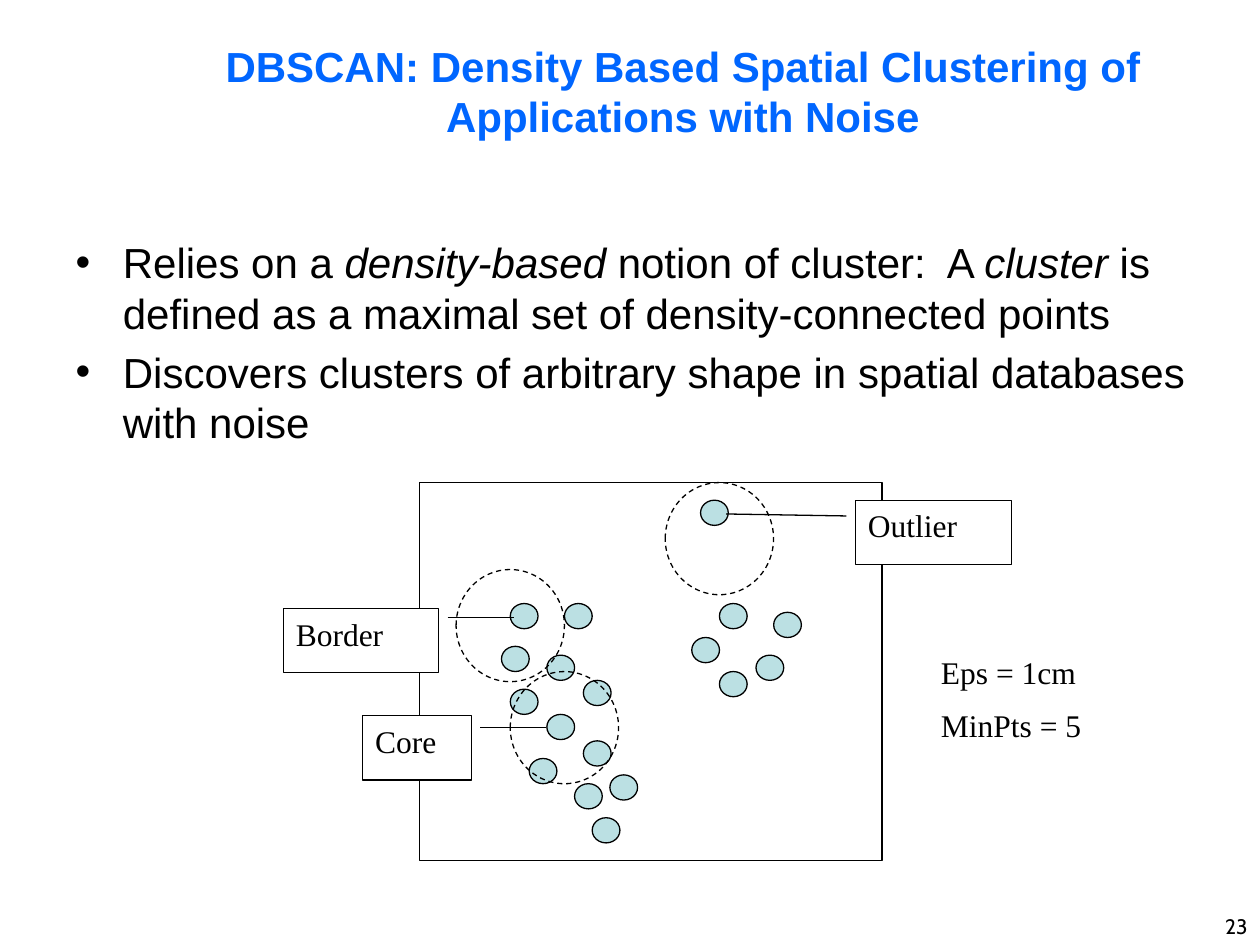
from pptx import Presentation
from pptx.dml.color import RGBColor
from pptx.enum.dml import MSO_LINE
from pptx.enum.shapes import MSO_SHAPE
from pptx.enum.text import MSO_ANCHOR, MSO_AUTO_SIZE, PP_ALIGN
from pptx.util import Pt

PX = 9144  # 100 px to the inch
OVAL, RECT, CALLOUT = MSO_SHAPE.OVAL, MSO_SHAPE.RECTANGLE, MSO_SHAPE.LINE_CALLOUT_1
TOP, MIDDLE, BOTTOM = MSO_ANCHOR.TOP, MSO_ANCHOR.MIDDLE, MSO_ANCHOR.BOTTOM
LEFT, CENTER, RIGHT = PP_ALIGN.LEFT, PP_ALIGN.CENTER, PP_ALIGN.RIGHT
DASH, NO_FIT = MSO_LINE.DASH, MSO_AUTO_SIZE.NONE

BLACK, WHITE, BLUE, TEAL = "000000", "FFFFFF", "0066FF", "BBE0E3"
HEADING = {"name": "Arial", "size": Pt(24), "bold": True}
BODY = {"name": "Arial", "size": Pt(24)}
LABEL = {"name": "Times New Roman", "size": Pt(18)}
NUMBER = {"name": "Cabin", "size": Pt(12)}

BULLETS = [
    [("Relies on a ", False), ("density-based", True),
     (" notion of cluster:  A ", False), ("cluster", True),
     (" is defined as a maximal set of density-connected points", False)],
    [("Discovers clusters of arbitrary shape in spatial databases with noise", False)],
]

# Positions inside the plot frame
DOT_SIZE = (22, 20)
DOTS = [(72, 96), (65, 130), (101, 137), (115, 96), (130, 157), (72, 164),
        (101, 184), (87, 219), (123, 239), (137, 266), (130, 205), (151, 232),
        (223, 14), (238, 96), (216, 123), (267, 137), (281, 103), (238, 150)]
RADIUS_SIZE = (86, 89)
RADII = [(29, 69), (72, 150), (195, 0)]
# text, box, line start y, x and line end y, x as shares of the box
CALLOUTS = [
    ("Core", (-45, 185, 86, 51), (0.188, 1.083, 0.188, 1.688)),
    ("Border", (-108, 100, 123, 51), (0.145, 1.059, 0.145, 1.485)),
    ("Outlier", (346, 14, 124, 51), (0.245, -0.058, 0.214, -0.828)),
]


def rgb(value):
    return RGBColor.from_string(value)


def emu(box):
    return [v * PX for v in box]


def place(sp, box):
    sp.left, sp.top, sp.width, sp.height = emu(box)


def setup_frame(tf, anchor):
    tf.word_wrap = True
    tf.auto_size = NO_FIT
    tf.vertical_anchor = anchor


def add_run(p, text, font, color=BLACK, italic=None):
    r = p.add_run()
    r.text = text
    for key, value in font.items():
        setattr(r.font, key, value)
    r.font.color.rgb = rgb(color)
    r.font.italic = italic


def add_lines(tf, lines, font, align=LEFT, space=0):
    for i, line in enumerate(lines):
        p = tf.paragraphs[0] if i == 0 else tf.add_paragraph()
        p.alignment = align
        p.space_before = Pt(space)
        add_run(p, line, font)


def outlined(s, kind, box, fill=None, dash=None):
    sp = s.shapes.add_shape(kind, *emu(box))
    sp.shadow.inherit = False
    if fill:
        sp.fill.solid()
        sp.fill.fore_color.rgb = rgb(fill)
    else:
        sp.fill.background()
    sp.line.color.rgb = rgb(BLACK)
    sp.line.width = Pt(0.75)
    if dash:
        sp.line.dash_style = dash
    return sp


def text_box(s, box, lines, font, anchor=TOP, align=LEFT, space=0):
    tf = s.shapes.add_textbox(*emu(box)).text_frame
    setup_frame(tf, anchor)
    add_lines(tf, lines, font, align, space)


def title(s, box):
    sp = s.shapes.title
    place(sp, box)
    setup_frame(sp.text_frame, MIDDLE)
    p = sp.text_frame.paragraphs[0]
    p.alignment = CENTER
    add_run(p, "DBSCAN: Density Based Spatial Clustering of Applications with Noise",
            HEADING, BLUE)


def bullet_list(s, box):
    sp = s.placeholders[1]
    place(sp, box)
    tf = sp.text_frame
    setup_frame(tf, TOP)
    for i, parts in enumerate(BULLETS):
        p = tf.paragraphs[0] if i == 0 else tf.add_paragraph()
        for text, italic in parts:
            add_run(p, text, BODY, italic=italic)


def cluster_plot(s, box):
    x, y, w, h = box
    for dx, dy in DOTS:
        outlined(s, OVAL, (x + dx, y + dy, *DOT_SIZE), TEAL)
    outlined(s, RECT, box)
    for dx, dy in RADII:
        outlined(s, OVAL, (x + dx, y + dy, *RADIUS_SIZE), dash=DASH)
    for text, (dx, dy, cw, ch), line in CALLOUTS:
        sp = outlined(s, CALLOUT, (x + dx, y + dy, cw, ch), WHITE)
        for i, value in enumerate(line):
            sp.adjustments[i] = value
        setup_frame(sp.text_frame, TOP)
        add_lines(sp.text_frame, [text], LABEL)
    text_box(s, (x + w + 37, y + 130, 180, 110), ["Eps = 1cm", "MinPts = 5"],
             LABEL, space=9)


def main():
    prs = Presentation()
    prs.slide_width, prs.slide_height = emu((1000, 750))
    s = prs.slides.add_slide(prs.slide_layouts[1])
    title(s, (126, 25, 832, 94))
    bullet_list(s, (50, 183, 908, 533))
    cluster_plot(s, (333, 383, 367, 300))
    text_box(s, (792, 708, 208, 42), ["23"], NUMBER, BOTTOM, RIGHT)
    prs.save("out.pptx")


if __name__ == "__main__":
    main()
